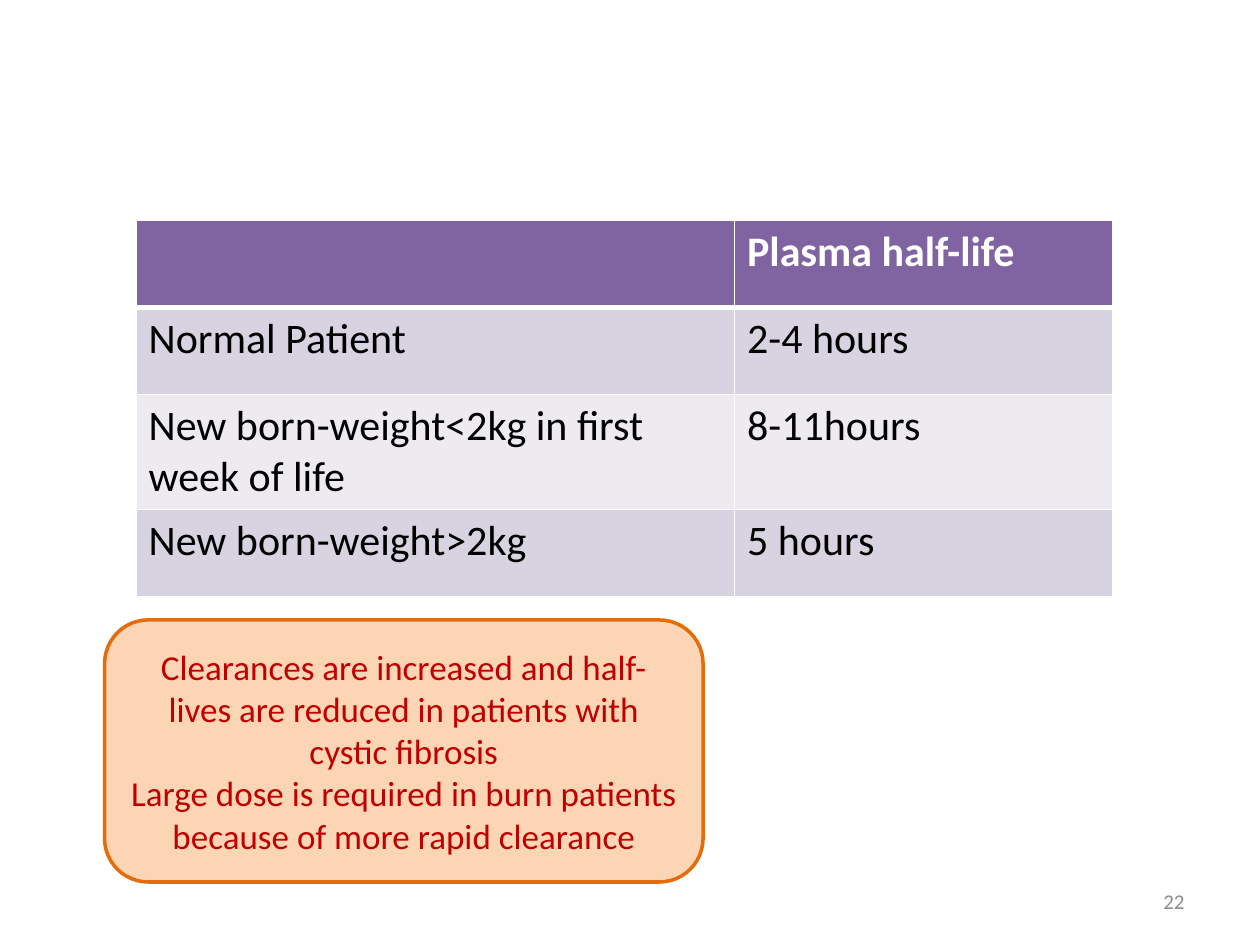
from dataclasses import dataclass

from lxml.etree import SubElement
from pptx import Presentation
from pptx.dml.color import RGBColor
from pptx.enum.shapes import MSO_SHAPE
from pptx.enum.text import MSO_ANCHOR as ANCHOR, PP_ALIGN as ALIGN
from pptx.oxml.ns import qn
from pptx.util import Emu, Pt

PX = 9144
COLORS = {
    "header": "8064A2",
    "band_dark": "D8D3E0",
    "band_light": "EDEAF0",
    "white": "FFFFFF",
    "black": "000000",
    "note_fill": "FCD5B5",
    "note_line": "E46C0A",
    "note_text": "C00000",
    "number": "8C8C8C",
}


@dataclass
class Box:
    left: int
    top: int
    width: int
    height: int

    def emu(self) -> list[Emu]:
        return [px(v) for v in (self.left, self.top, self.width, self.height)]


@dataclass
class Row:
    label: str
    half_life: str
    fill: str
    color: str = "black"
    bold: bool = False


ROWS = [
    Row("", "Plasma half-life", "header", "white", True),
    Row("Normal Patient", "2-4 hours", "band_dark"),
    Row("New born-weight<2kg in first week of life", "8-11hours", "band_light"),
    Row("New born-weight>2kg", "5 hours", "band_dark"),
]
COL_WIDTHS = [475, 300]
ROW_HEIGHT = 69
NOTE = [
    "Clearances are increased and half-lives are reduced in patients with cystic fibrosis",
    "Large dose is required in burn patients because of more rapid clearance",
]


def px(n: int) -> Emu:
    return Emu(n * PX)


def rgb(name: str) -> RGBColor:
    return RGBColor.from_string(COLORS[name])


def style_text(tf, size: int, color: str, align=ALIGN.LEFT, bold: bool = False) -> None:
    for p in tf.paragraphs:
        p.alignment = align
        for r in p.runs:
            r.font.name = "Calibri"
            r.font.size = Pt(size)
            r.font.bold = bold
            r.font.color.rgb = rgb(color)


def set_borders(cell, top: int, bottom: int) -> None:
    tc_pr = cell._tc.get_or_add_tcPr()
    widths = {"a:lnL": 1, "a:lnR": 1, "a:lnT": top, "a:lnB": bottom}
    for i, (tag, width) in enumerate(widths.items()):
        ln = SubElement(tc_pr, qn(tag), w=str(Pt(width)))
        fill = SubElement(ln, qn("a:solidFill"))
        SubElement(fill, qn("a:srgbClr"), val=COLORS["white"])
        tc_pr.insert(i, ln)


def draw_table(slide, box: Box) -> None:
    table = slide.shapes.add_table(len(ROWS), len(COL_WIDTHS), *box.emu()).table
    for col, width in zip(table.columns, COL_WIDTHS):
        col.width = px(width)
    for i, row in enumerate(ROWS):
        table.rows[i].height = px(ROW_HEIGHT)
        for j, text in enumerate((row.label, row.half_life)):
            cell = table.cell(i, j)
            cell.text_frame.text = text
            cell.fill.solid()
            cell.fill.fore_color.rgb = rgb(row.fill)
            style_text(cell.text_frame, 24, row.color, bold=row.bold)
            set_borders(cell, 3 if i == 1 else 1, 3 if i == 0 else 1)


def draw_note(slide, box: Box) -> None:
    sp = slide.shapes.add_shape(MSO_SHAPE.ROUNDED_RECTANGLE, *box.emu())
    sp.shadow.inherit = False
    sp.fill.solid()
    sp.fill.fore_color.rgb = rgb("note_fill")
    sp.line.color.rgb = rgb("note_line")
    sp.line.width = Pt(2)
    tf = sp.text_frame
    tf.word_wrap = True
    tf.vertical_anchor = ANCHOR.MIDDLE
    tf.text = "\n".join(NOTE)
    style_text(tf, 20, "note_text", ALIGN.CENTER)


def draw_page_number(slide, box: Box, number: int) -> None:
    tf = slide.shapes.add_textbox(*box.emu()).text_frame
    tf.word_wrap = True
    tf.vertical_anchor = ANCHOR.MIDDLE
    tf.text = str(number)
    style_text(tf, 12, "number", ALIGN.RIGHT)


def main() -> None:
    prs = Presentation()
    prs.slide_width, prs.slide_height = px(1000), px(750)
    slide = prs.slides.add_slide(prs.slide_layouts[6])
    draw_table(slide, Box(108, 175, sum(COL_WIDTHS), 296))
    draw_note(slide, Box(83, 492, 475, 208))
    draw_page_number(slide, Box(717, 695, 233, 40), 22)
    prs.save("out.pptx")


if __name__ == "__main__":
    main()
